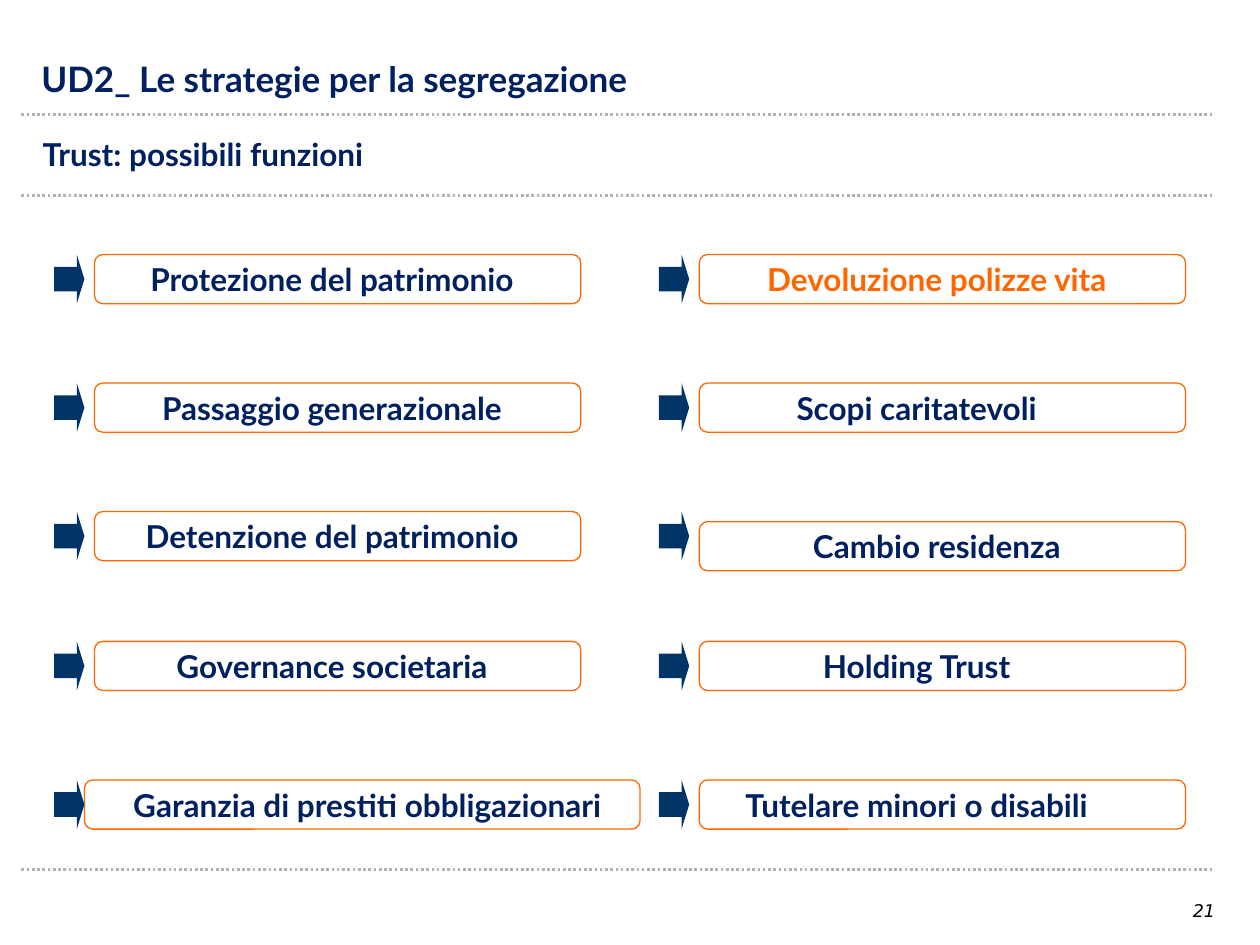
import pptx
import pptx.util
import pptx.dml.color
import pptx.enum.dml
import pptx.enum.shapes
import pptx.enum.text
import pptx.oxml.ns
import lxml.etree
from dataclasses import dataclass

PX = 9144
SHAPE = pptx.enum.shapes.MSO_SHAPE
ALIGN = pptx.enum.text.PP_ALIGN
ANCHOR = pptx.enum.text.MSO_ANCHOR


@dataclass(frozen=True)
class Theme:
    navy: str = "002060"
    arrow: str = "003366"
    orange: str = "FF6600"
    grey: str = "B2B2B2"
    black: str = "000000"
    font: str = "Lato"
    number_font: str = "DejaVu Sans"
    title: int = 20
    body: int = 18
    number: int = 10


T = Theme()
BODY = {"name": T.font, "size": pptx.util.Pt(T.body), "bold": True}


def rgb(value):
    return pptx.dml.color.RGBColor.from_string(value)


def emu(box):
    return [v * PX for v in box]


def add_text(s, box, text, fmt, color=T.navy, align=ALIGN.LEFT, anchor=ANCHOR.TOP):
    tf = s.shapes.add_textbox(*emu(box)).text_frame
    tf.word_wrap = True
    tf.vertical_anchor = anchor
    p = tf.paragraphs[0]
    p.alignment = align
    r = p.add_run()
    r.text = text
    for key, value in fmt.items():
        setattr(r.font, key, value)
    r.font.color.rgb = rgb(color)


def add_rule(s, x, y, w):
    sp = s.shapes.add_connector(
        pptx.enum.shapes.MSO_CONNECTOR.STRAIGHT, *emu((x, y, x + w, y)))
    line = sp.line
    line.color.rgb = rgb(T.grey)
    line.width = pptx.util.Pt(1.5)
    line.dash_style = pptx.enum.dml.MSO_LINE.ROUND_DOT
    lxml.etree.SubElement(sp._element.spPr, pptx.oxml.ns.qn("a:effectLst"))


def add_shape(s, kind, box, adjustments):
    sp = s.shapes.add_shape(kind, *emu(box))
    sp.shadow.inherit = False
    for i, value in enumerate(adjustments):
        sp.adjustments[i] = value
    return sp


def add_header(s, x, y, w):
    add_text(s, (x + 6, y, 556, 44), "UD2_ Le strategie per la segregazione",
             {**BODY, "size": pptx.util.Pt(T.title)})
    add_rule(s, x, y + 50, w)
    add_text(s, (x + 7, y + 61, 330, 40), "Trust: possibili funzioni", BODY)
    add_rule(s, x, y + 114, w)


def add_function(s, x, y, text, color=T.navy, frame=(32, 386), label=(16, 409), drop=0):
    h = 39
    left, width = frame
    sp = add_shape(s, SHAPE.ROUNDED_RECTANGLE, (x + left, y + drop, width, h), [0.17])
    sp.fill.background()
    sp.line.color.rgb = rgb(T.orange)
    sp.line.width = pptx.util.Pt(0.75)
    sp = add_shape(s, SHAPE.RIGHT_ARROW, (x, y, 24, h), [0.5, 0.25])
    sp.fill.solid()
    sp.fill.fore_color.rgb = rgb(T.arrow)
    sp.line.fill.background()
    left, width = label
    add_text(s, (x + left, y + drop, width, h), text, BODY, color,
             ALIGN.CENTER, ANCHOR.MIDDLE)


def add_functions(s, x, y):
    wide = {"frame": (24, 441), "label": (24, 449)}
    shifted = {"label": (0, 409)}
    columns = [
        [("Protezione del patrimonio", {}),
         ("Passaggio generazionale", {}),
         ("Detenzione del patrimonio", {}),
         ("Governance societaria", {}),
         ("Garanzia di prestiti obbligazionari", wide)],
        [("Devoluzione polizze vita", {"color": T.orange}),
         ("Scopi caritatevoli", shifted),
         ("Cambio residenza", {"drop": 8}),
         ("Holding Trust", shifted),
         ("Tutelare minori o disabili", shifted)],
    ]
    rows = (0, 102, 204, 307, 417)
    for i, column in enumerate(columns):
        for dy, (text, options) in zip(rows, column):
            add_function(s, x + i * 480, y + dy, text, **options)


def add_footer(s, x, y, w):
    add_rule(s, x, y, w)
    fmt = {"name": T.number_font, "size": pptx.util.Pt(T.number), "italic": True}
    add_text(s, (x + w - 30, y + 19, 47, 36), "21", fmt, T.black, ALIGN.CENTER)


def main():
    prs = pptx.Presentation()
    prs.slide_width, prs.slide_height = emu((1000, 750))
    s = prs.slides.add_slide(prs.slide_layouts[6])
    add_header(s, 17, 41, 945)
    add_functions(s, 43, 202)
    add_footer(s, 17, 690, 945)
    prs.save("out.pptx")


if __name__ == "__main__":
    main()
